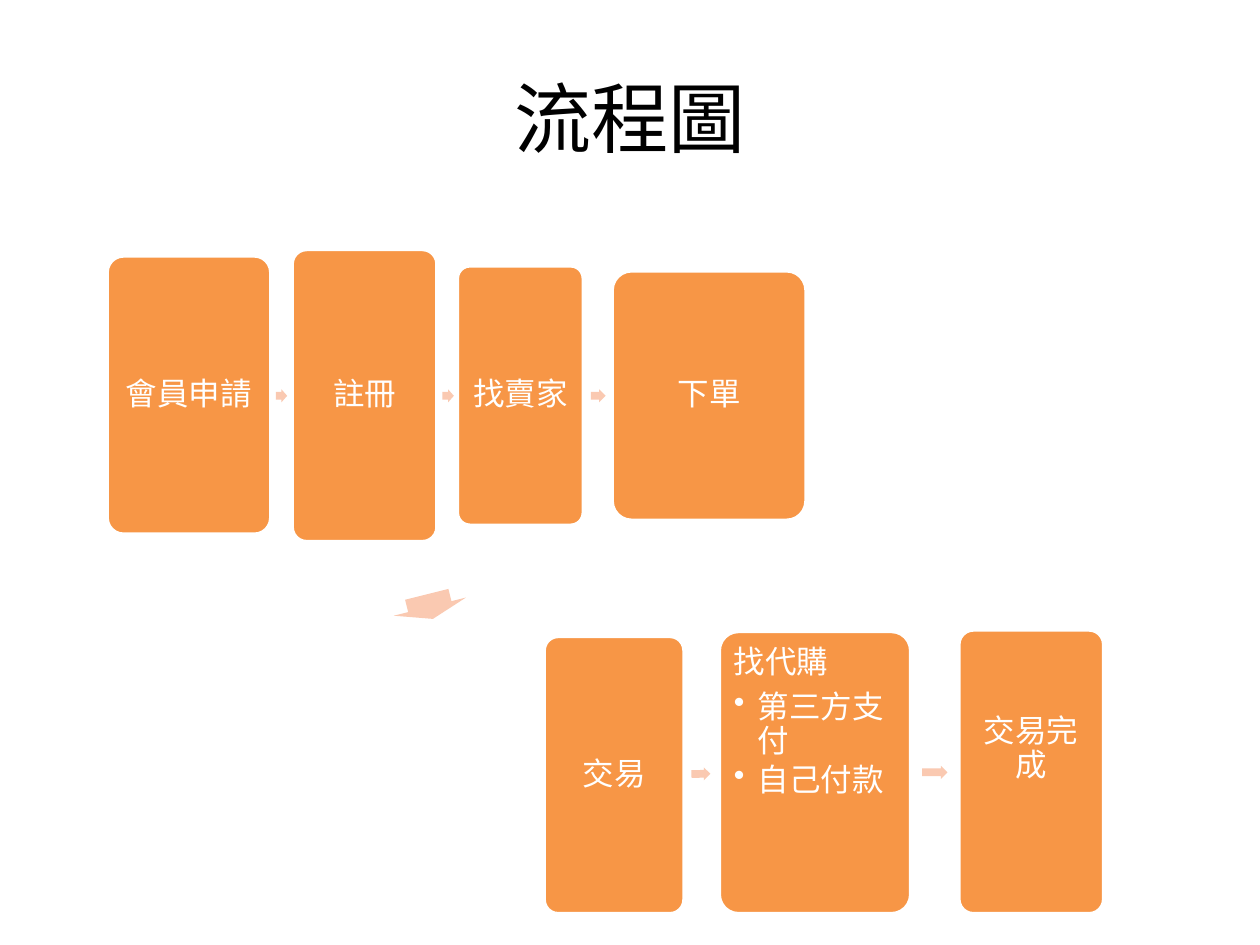
"""Build the purchase flow chart slide."""
from dataclasses import dataclass

from lxml import etree
from pptx import Presentation
from pptx.dml.color import RGBColor
from pptx.enum.shapes import MSO_SHAPE
from pptx.enum.text import MSO_ANCHOR, PP_ALIGN
from pptx.oxml.ns import qn
from pptx.util import Cm, Pt

ROUNDED, ARROW = MSO_SHAPE.ROUNDED_RECTANGLE, MSO_SHAPE.RIGHT_ARROW
CENTER, LEFT = PP_ALIGN.CENTER, PP_ALIGN.LEFT
MIDDLE, TOP = MSO_ANCHOR.MIDDLE, MSO_ANCHOR.TOP


@dataclass(frozen=True)
class Theme:
    box: RGBColor = RGBColor(0xF7, 0x96, 0x46)
    arrow: RGBColor = RGBColor(0xFA, 0xC9, 0xB1)
    light: RGBColor = RGBColor(0xFF, 0xFF, 0xFF)
    dark: RGBColor = RGBColor(0, 0, 0)
    title_font: str = "Calibri"
    body_font: str = "Noto Sans CJK SC"
    title_size: Pt = Pt(44)
    body_size: Pt = Pt(18)
    border: Pt = Pt(2)
    inset: Cm = Cm(0.18)
    indent: Cm = Cm(0.48)


@dataclass(frozen=True)
class Step:
    left: float
    top: float
    width: float
    height: float
    text: str
    bullets: tuple[str, ...] = ()
    lift: float = 0


@dataclass(frozen=True)
class Arrow:
    left: float
    top: float
    width: float
    height: float = 0.26
    rotation: float = 0


THEME = Theme()
STEPS = (
    Step(2.16, 5.16, 3.3, 5.61, "會員申請"),
    Step(5.89, 5.03, 2.92, 5.89, "註冊"),
    Step(9.22, 5.36, 2.54, 5.23, "找賣家"),
    Step(12.34, 5.46, 3.91, 5.03, "下單"),
    Step(10.97, 12.83, 2.82, 5.59, "交易"),
    Step(14.5, 12.73, 3.86, 5.69, "找代購", ("第三方支付", "自己付款")),
    Step(19.33, 12.7, 2.92, 5.72, "交易完成", lift=0.91),
)
ARROWS = (
    Arrow(5.56, 7.85, 0.23),
    Arrow(8.92, 7.85, 0.23),
    Arrow(11.91, 7.85, 0.3),
    Arrow(8.41, 11.48, 0.51, 1.5, 75.9),
    Arrow(13.94, 15.47, 0.38, rotation=359.2),
    Arrow(18.59, 15.44, 0.51, rotation=359.9),
)


def add_block(slide, kind, item: Step | Arrow, color: RGBColor):
    """Add a filled shape at the place of the item."""
    sp = slide.shapes.add_shape(
        kind, Cm(item.left), Cm(item.top), Cm(item.width), Cm(item.height))
    sp.shadow.inherit = False
    sp.fill.solid()
    sp.fill.fore_color.rgb = color
    return sp


def format_paragraph(p, text: str, align, after: float) -> None:
    """Write the text of a paragraph in the body style."""
    p.text = text
    p.alignment = align
    p.line_spacing = 0.9
    p.space_after = Pt(after)
    p.font.name = THEME.body_font
    p.font.size = THEME.body_size
    p.font.color.rgb = THEME.light


def add_bullet(tf, text: str) -> None:
    """Append a paragraph with a hanging bullet."""
    p = tf.add_paragraph()
    format_paragraph(p, text, LEFT, 2.7)
    p.level = 1
    pr = p._p.get_or_add_pPr()
    pr.set("marL", str(THEME.indent))
    pr.set("indent", str(-THEME.indent))
    bullet = etree.Element(qn("a:buChar"), char="•")
    pr.find(qn("a:defRPr")).addprevious(bullet)


def add_step(slide, step: Step) -> None:
    """Draw one step of the flow with its text."""
    sp = add_block(slide, ROUNDED, step, THEME.box)
    sp.adjustments[0] = 0.1
    sp.line.color.rgb = THEME.light
    sp.line.width = THEME.border
    tf = sp.text_frame
    tf.word_wrap = True
    tf.margin_left = tf.margin_right = tf.margin_top = THEME.inset
    tf.margin_bottom = THEME.inset + Cm(step.lift)
    tf.vertical_anchor = TOP if step.bullets else MIDDLE
    format_paragraph(
        tf.paragraphs[0], step.text, LEFT if step.bullets else CENTER, 6.3)
    for text in step.bullets:
        add_bullet(tf, text)


def add_arrow(slide, arrow: Arrow) -> None:
    """Draw one arrow between steps."""
    sp = add_block(slide, ARROW, arrow, THEME.arrow)
    sp.adjustments[0] = 0.6
    sp.adjustments[1] = 0.5
    sp.line.fill.background()
    sp.rotation = arrow.rotation


def add_title(slide, text: str) -> None:
    """Place and format the slide title."""
    sp = slide.shapes.title
    sp.left, sp.top, sp.width, sp.height = Cm(1.27), Cm(0.76), Cm(22.86), Cm(3.18)
    tf = sp.text_frame
    tf.vertical_anchor = MIDDLE
    p = tf.paragraphs[0]
    p.text = text
    p.alignment = CENTER
    p.font.name = THEME.title_font
    p.font.size = THEME.title_size
    p.font.color.rgb = THEME.dark


def main() -> None:
    """Build and save the presentation."""
    prs = Presentation()
    prs.slide_width, prs.slide_height = Cm(25.4), Cm(19.05)
    slide = prs.slides.add_slide(prs.slide_layouts[5])
    add_title(slide, "流程圖")
    for step in STEPS:
        add_step(slide, step)
    for arrow in ARROWS:
        add_arrow(slide, arrow)
    prs.save("out.pptx")


if __name__ == "__main__":
    main()
